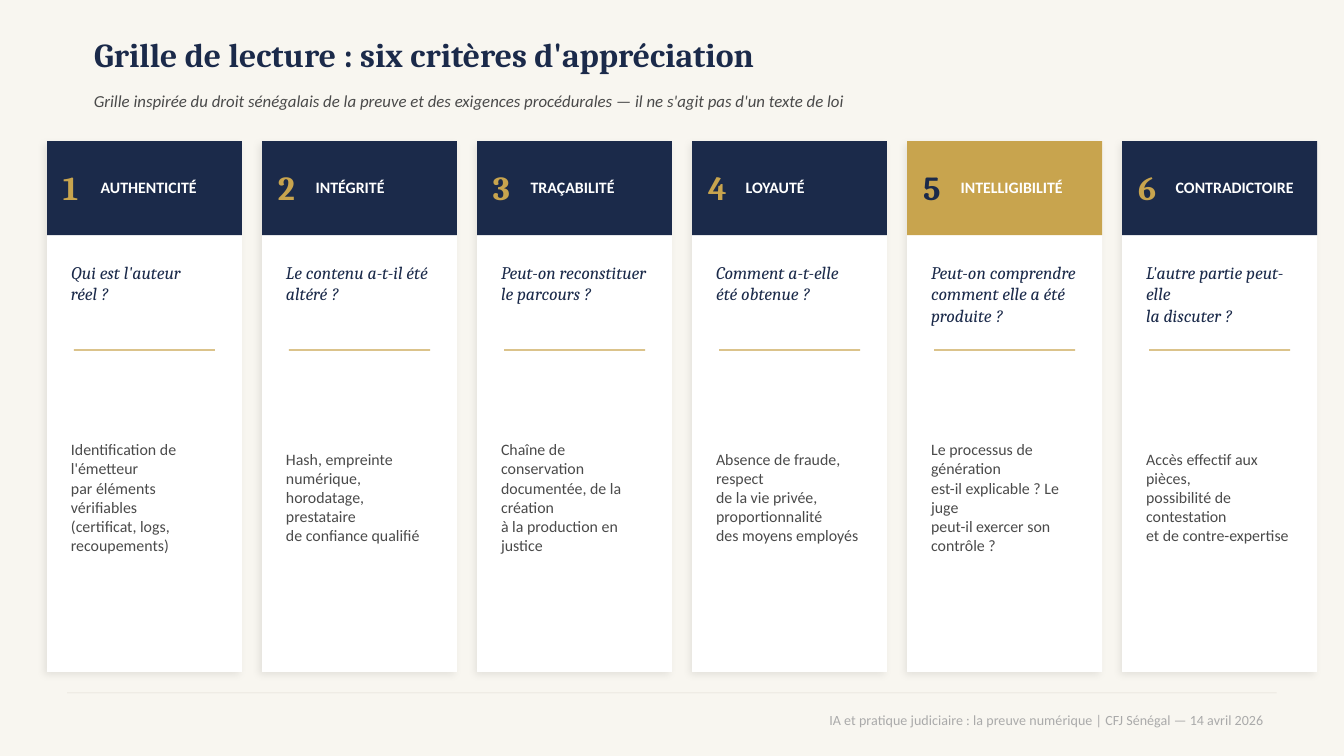
from lxml.etree import SubElement
from pptx import Presentation
from pptx.dml.color import RGBColor
from pptx.enum.shapes import MSO_SHAPE
from pptx.enum.text import MSO_ANCHOR, MSO_AUTO_SIZE, PP_ALIGN
from pptx.oxml.ns import qn
from pptx.util import Pt

CRITERIA = [
    ("AUTHENTICITÉ", "Qui est l'auteur réel ?",
     "Identification de l'émetteur\npar éléments vérifiables\n(certificat, logs, recoupements)"),
    ("INTÉGRITÉ", "Le contenu a-t-il été altéré ?",
     "Hash, empreinte numérique,\nhorodatage, prestataire\nde confiance qualifié"),
    ("TRAÇABILITÉ", "Peut-on reconstituer\nle parcours ?",
     "Chaîne de conservation\ndocumentée, de la création\nà la production en justice"),
    ("LOYAUTÉ", "Comment a-t-elle\nété obtenue ?",
     "Absence de fraude, respect\nde la vie privée, proportionnalité\ndes moyens employés"),
    ("INTELLIGIBILITÉ", "Peut-on comprendre\ncomment elle a été produite ?",
     "Le processus de génération\nest-il explicable ? Le juge\npeut-il exercer son contrôle ?"),
    ("CONTRADICTOIRE", "L'autre partie peut-elle\nla discuter ?",
     "Accès effectif aux pièces,\npossibilité de contestation\net de contre-expertise"),
]
HIGHLIGHTED = 5


def rgb(value):
    return RGBColor.from_string(value)


class Deck:
    NAVY = "1B2A4A"
    GOLD = "C8A44E"
    WHITE = "FFFFFF"
    GREY = "4A4A4A"
    PALE = "AAAAAA"
    RULE = "EFECE5"
    PAPER = "F8F6F0"
    SERIF = "Cambria"
    SANS = "Calibri"

    def __init__(self):
        self.prs = Presentation()
        self.prs.slide_width = Pt(720)
        self.prs.slide_height = Pt(405)
        self.s = None

    def add_slide(self):
        self.s = self.prs.slides.add_slide(self.prs.slide_layouts[5])
        fill = self.s.background.fill
        fill.solid()
        fill.fore_color.rgb = rgb(self.PAPER)

    def set_text(self, sp, text, size, color, font, bold=False, italic=False,
                 align=PP_ALIGN.LEFT, anchor=MSO_ANCHOR.MIDDLE):
        tf = sp.text_frame
        tf.text = text
        tf.word_wrap = True
        tf.auto_size = MSO_AUTO_SIZE.NONE
        tf.vertical_anchor = anchor
        for p in tf.paragraphs:
            p.alignment = align
            for r in p.runs:
                r.font.size = Pt(size)
                r.font.name = font
                r.font.bold = bold
                r.font.italic = italic
                r.font.color.rgb = rgb(color)

    def title(self, x, y, w, h, text):
        sp = self.s.shapes.title
        sp.left, sp.top, sp.width, sp.height = Pt(x), Pt(y), Pt(w), Pt(h)
        self.set_text(sp, text, 18, self.NAVY, self.SERIF, bold=True)

    def text(self, x, y, w, h, text, size, color, font, **style):
        sp = self.s.shapes.add_textbox(Pt(x), Pt(y), Pt(w), Pt(h))
        self.set_text(sp, text, size, color, font, **style)

    def rect(self, x, y, w, h, color):
        sp = self.s.shapes.add_shape(MSO_SHAPE.RECTANGLE, Pt(x), Pt(y), Pt(w), Pt(h))
        sp.shadow.inherit = False
        sp.fill.solid()
        sp.fill.fore_color.rgb = rgb(color)
        sp.line.fill.background()
        return sp

    def panel(self, x, y, w, h):
        sp = self.rect(x, y, w, h, self.WHITE)
        effects = sp.element.spPr.find(qn("a:effectLst"))
        shadow = SubElement(effects, qn("a:outerShdw"), blurRad=str(Pt(4)),
                            dist=str(Pt(2)), dir="8100000", algn="bl",
                            rotWithShape="0")
        color = SubElement(shadow, qn("a:srgbClr"), val="000000")
        SubElement(color, qn("a:alpha"), val="8000")

    def criterion(self, x, number, name, question, detail, highlighted):
        header, digit = (self.GOLD, self.NAVY) if highlighted else (self.NAVY, self.GOLD)
        self.panel(x, 75.6, 104.4, 284.4)
        self.rect(x, 75.6, 104.4, 50.4, header)
        self.text(x + 1.44, 77.04, 21.6, 46.8, str(number), 18, digit, self.SERIF,
                  bold=True, align=PP_ALIGN.CENTER)
        self.text(x + 21.6, 77.04, 79.2, 46.8, name, 8.5, self.WHITE, self.SANS, bold=True)
        self.text(x + 5.76, 136.8, 93.6, 46.8, question, 9.5, self.NAVY, self.SERIF,
                  italic=True, anchor=MSO_ANCHOR.TOP)
        self.rect(x + 14.4, 187.2, 75.6, 0.72, self.GOLD)
        self.text(x + 5.76, 194.4, 93.6, 144, detail, 8.5, self.GREY, self.SANS)

    def footer(self, text):
        self.rect(36, 370.8, 648, 0.72, self.RULE)
        self.text(36, 372.96, 648, 25.2, text, 7.5, self.PALE, self.SANS,
                  align=PP_ALIGN.RIGHT)


def main():
    deck = Deck()
    deck.add_slide()
    deck.footer("IA et pratique judiciaire : la preuve numérique | CFJ Sénégal — 14 avril 2026")
    deck.title(43.2, 14.4, 648, 28.8, "Grille de lecture : six critères d'appréciation")
    deck.text(43.2, 43.2, 648, 21.6,
              "Grille inspirée du droit sénégalais de la preuve et des exigences "
              "procédurales — il ne s'agit pas d'un texte de loi",
              9, deck.GREY, deck.SANS, italic=True)
    for number, (name, question, detail) in enumerate(CRITERIA, 1):
        x = 25.2 + (number - 1) * 115.2
        deck.criterion(x, number, name, question, detail, number == HIGHLIGHTED)
    deck.prs.save("out.pptx")


if __name__ == "__main__":
    main()
